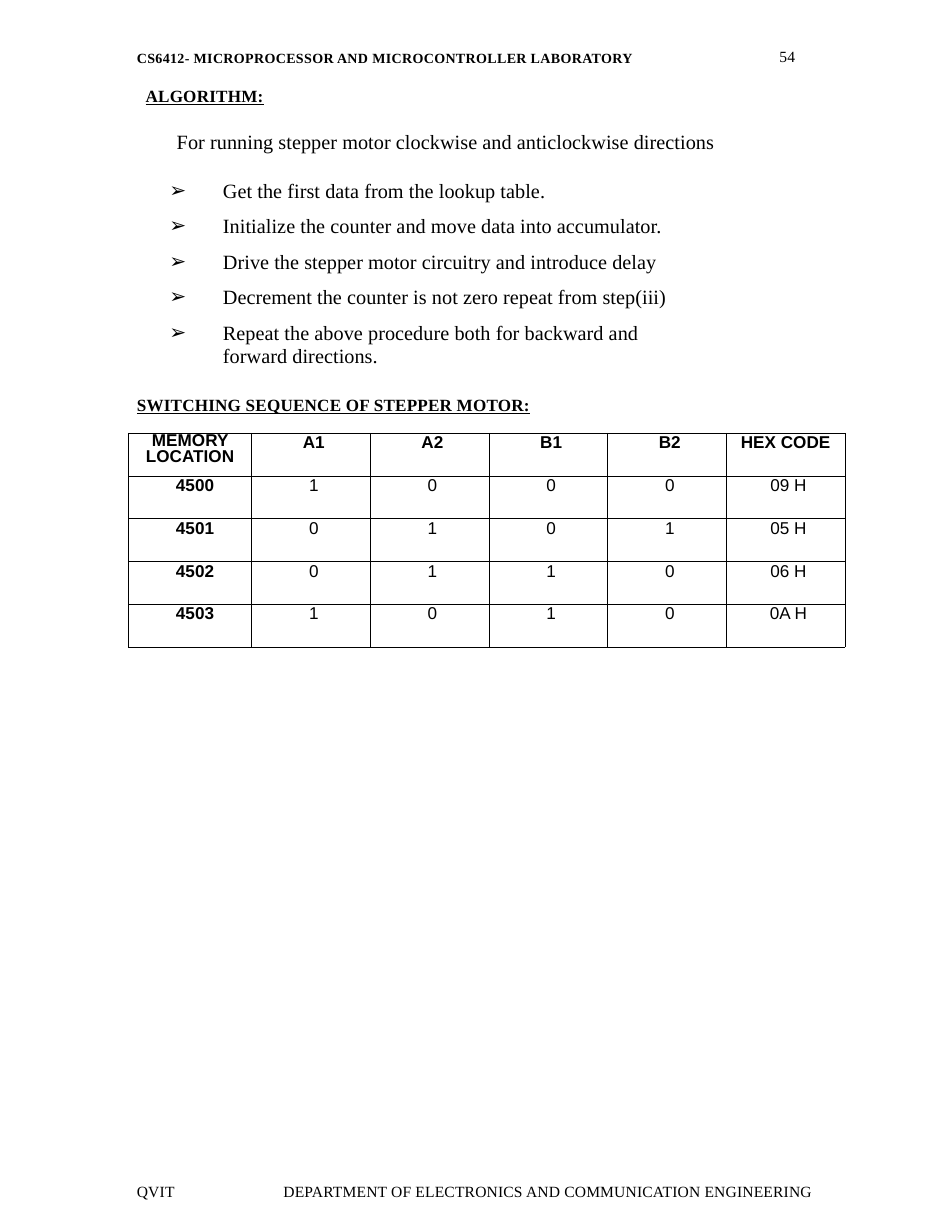
from dataclasses import dataclass

import pptx
import pptx.dml.color
import pptx.enum.text
import pptx.oxml.ns
import pptx.util
from lxml import etree

Pt = pptx.util.Pt
COLOURS = {"ink": "000000"}
SERIF, SANS = "Times New Roman", "Arial"


@dataclass(frozen=True)
class Style:
    size: float
    font: str = SERIF
    bold: bool = False
    underline: bool = False
    tracking: float = 0


@dataclass(frozen=True)
class Box:
    left: float
    top: float
    width: float
    height: float


@dataclass(frozen=True)
class Label:
    text: str
    box: Box
    style: Style


FOOTER = Style(10, tracking=0.14)
HEADER = Style(9, bold=True, tracking=0.22)
HEADING = Style(11, bold=True, underline=True, tracking=0.1)
BODY = Style(13, tracking=0.05)
CELL = Style(11, SANS)
CELL_BOLD = Style(11, SANS, bold=True)

LABELS = [
    Label("QVIT", Box(88, 759.6, 40, 13), FOOTER),
    Label("DEPARTMENT OF ELECTRONICS AND COMMUNICATION ENGINEERING",
          Box(182.2, 759.6, 360, 13), FOOTER),
    Label("CS6412- MICROPROCESSOR AND MICROCONTROLLER LABORATORY",
          Box(88, 31.7, 340, 11.5), HEADER),
    Label("54", Box(501.1, 30.2, 20, 13), FOOTER),
    Label("SWITCHING SEQUENCE OF STEPPER MOTOR:", Box(88, 253.4, 280, 14), HEADING),
]
STEPS = [
    "Get the first data from the lookup table.",
    "Initialize the counter and move data into accumulator.",
    "Drive the stepper motor circuitry and introduce delay",
    "Decrement the counter is not zero repeat from step(iii)",
    "Repeat the above procedure both for backward and forward directions.",
]
SEQUENCE = [
    ["MEMORY LOCATION", "A1", "A2", "B1", "B2", "HEX CODE"],
    ["4500", "1", "0", "0", "0", "09 H"],
    ["4501", "0", "1", "0", "1", "05 H"],
    ["4502", "0", "1", "1", "0", "06 H"],
    ["4503", "1", "0", "1", "0", "0A H"],
]
COLUMN_WIDTHS = [79.2] + [76.3] * 5
ROW_HEIGHT = 27.5
BORDER_WIDTH = 0.44


def add_child(parent, tag: str, **attributes: str):
    child = etree.SubElement(parent, pptx.oxml.ns.qn(tag))
    for name, value in attributes.items():
        child.set(name, value)
    return child


def add_run(paragraph, text: str, style: Style) -> None:
    run = paragraph.add_run()
    run.text = text
    font = run.font
    font.name, font.size = style.font, Pt(style.size)
    font.bold, font.underline = style.bold, style.underline
    font.color.rgb = pptx.dml.color.RGBColor.from_string(COLOURS["ink"])
    if style.tracking:
        font._element.set("spc", str(round(style.tracking * 100)))


def set_indent(paragraph, left: float, first_line: float = 0) -> None:
    properties = paragraph._p.get_or_add_pPr()
    properties.set("marL", str(Pt(left)))
    properties.set("indent", str(Pt(first_line)))


def add_text_frame(slide, box: Box):
    shape = slide.shapes.add_textbox(Pt(box.left), Pt(box.top), Pt(box.width), Pt(box.height))
    frame = shape.text_frame
    frame.word_wrap = True
    frame.margin_left = frame.margin_top = frame.margin_right = frame.margin_bottom = 0
    return frame


def add_label(slide, label: Label) -> None:
    add_run(add_text_frame(slide, label.box).paragraphs[0], label.text, label.style)


def add_algorithm_intro(slide) -> None:
    frame = add_text_frame(slide, Box(93.6, 54.7, 400, 45))
    add_run(frame.paragraphs[0], "ALGORITHM:", HEADING)
    paragraph = frame.add_paragraph()
    paragraph.space_before = Pt(15.5)
    set_indent(paragraph, 20)
    add_run(paragraph, "For running stepper motor clockwise and anticlockwise directions", BODY)


def add_steps(slide) -> None:
    frame = add_text_frame(slide, Box(108.9, 115.2, 331, 122))
    for index, step in enumerate(STEPS):
        paragraph = frame.add_paragraph() if index else frame.paragraphs[0]
        paragraph.line_spacing = Pt(15)
        paragraph.space_after = Pt(7.8)
        set_indent(paragraph, 34.4, -34.4)
        properties = paragraph._p.get_or_add_pPr()
        add_child(properties, "a:buFont", typeface=SANS)
        add_child(properties, "a:buChar", char="➢")
        add_run(paragraph, step, BODY)


def set_borders(cell) -> None:
    properties = cell._tc.get_or_add_tcPr()
    for tag in ("a:lnL", "a:lnR", "a:lnT", "a:lnB"):
        line = add_child(properties, tag, w=str(Pt(BORDER_WIDTH)))
        add_child(add_child(line, "a:solidFill"), "a:srgbClr", val=COLOURS["ink"])


def fill_cell(cell, text: str, style: Style, indent: float):
    cell.margin_left = cell.margin_top = cell.margin_right = cell.margin_bottom = 0
    set_borders(cell)
    cell.fill.background()
    paragraph = cell.text_frame.paragraphs[0]
    paragraph.alignment = pptx.enum.text.PP_ALIGN.CENTER
    set_indent(paragraph, indent)
    add_run(paragraph, text, style)
    return paragraph


def add_sequence_table(slide) -> None:
    frame = slide.shapes.add_table(
        len(SEQUENCE), len(COLUMN_WIDTHS), Pt(82.6), Pt(278.5),
        Pt(sum(COLUMN_WIDTHS)), Pt(ROW_HEIGHT * len(SEQUENCE)))
    table = frame.table
    table.first_row = table.horz_banding = False
    for column, width in zip(table.columns, COLUMN_WIDTHS):
        column.width = Pt(width)
    for row_index, values in enumerate(SEQUENCE):
        table.rows[row_index].height = Pt(ROW_HEIGHT)
        for column_index, value in enumerate(values):
            is_bold = row_index == 0 or column_index == 0
            indent = 6.4 if column_index == 0 else 3.6
            if value in ("MEMORY LOCATION", "HEX CODE"):
                indent = 0
            paragraph = fill_cell(table.cell(row_index, column_index), value,
                                  CELL_BOLD if is_bold else CELL, indent)
            if row_index == column_index == 0:
                paragraph.line_spacing = Pt(10.7)


def main() -> None:
    presentation = pptx.Presentation()
    presentation.slide_width, presentation.slide_height = Pt(612), Pt(792)
    slide = presentation.slides.add_slide(presentation.slide_layouts[6])
    for label in LABELS:
        add_label(slide, label)
    add_algorithm_intro(slide)
    add_steps(slide)
    add_sequence_table(slide)
    presentation.save("out.pptx")


if __name__ == "__main__":
    main()
